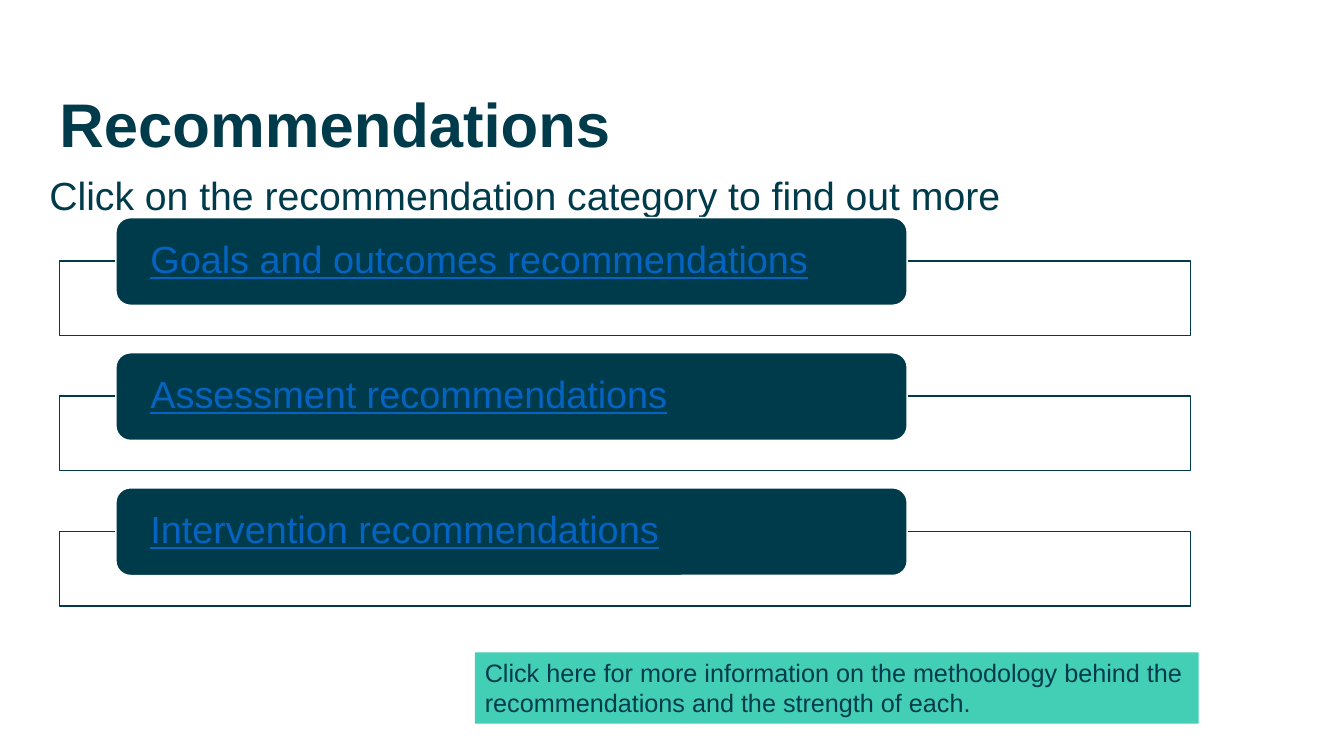
from lxml.etree import SubElement
from pptx import Presentation
from pptx.dml.color import RGBColor
from pptx.enum.shapes import MSO_SHAPE as Shape
from pptx.enum.text import MSO_ANCHOR as Anchor, MSO_AUTO_SIZE as AutoSize, PP_ALIGN as Align
from pptx.oxml.ns import qn
from pptx.util import Pt

PETROL = RGBColor(0x00, 0x3B, 0x4C)
MINT = RGBColor(0x43, 0xCF, 0xB5)
LINK_BLUE = RGBColor(0x05, 0x63, 0xC1)
WHITE = RGBColor(0xFF, 0xFF, 0xFF)

CATEGORIES = [
    "Goals and outcomes recommendations",
    "Assessment recommendations",
    "Intervention recommendations",
]
FIRST_TOP = 155.5
PITCH = 96.5


def place(shape, left, top, width, height):
    shape.left, shape.top = Pt(left), Pt(top)
    shape.width, shape.height = Pt(width), Pt(height)


def write(shape, text, size, color=PETROL, spacing=0.9, anchor=Anchor.TOP):
    frame = shape.text_frame
    frame.word_wrap = True
    frame.auto_size = AutoSize.NONE
    frame.vertical_anchor = anchor
    para = frame.paragraphs[0]
    para.text = text
    para.alignment = Align.LEFT
    para.line_spacing = spacing
    para.space_before = Pt(0)
    para.font.name = "Arial"
    para.font.size = Pt(size)
    para.font.color.rgb = color
    return para


def set_side_insets(frame, inset):
    frame.margin_left = frame.margin_right = Pt(inset)
    frame.margin_top = frame.margin_bottom = Pt(0)


def add_block(page, kind, bounds, fill, line=None):
    block = page.shapes.add_shape(kind, *map(Pt, bounds))
    block.shadow.inherit = False
    block.fill.solid()
    block.fill.fore_color.rgb = fill
    if line is None:
        block.line.fill.background()
    else:
        block.line.color.rgb = line
        block.line.width = Pt(1)
    return block


def set_opacity(shape, percent):
    color = shape.fill._xPr.find(qn("a:solidFill"))[0]
    SubElement(color, qn("a:alpha"), val=str(percent * 1000))


def add_category(page, text, top):
    frame_box = add_block(page, Shape.RECTANGLE, (42.5, top + 31, 807.8, 53.3), WHITE, PETROL)
    set_opacity(frame_box, 90)
    label = add_block(page, Shape.ROUNDED_RECTANGLE, (82.8, top, 565.2, 62.6), PETROL, WHITE)
    para = write(label, text, 27, LINK_BLUE, anchor=Anchor.MIDDLE)
    para.font.underline = True
    set_side_insets(label.text_frame, 21.6)


def main():
    deck = Presentation()
    deck.slide_width, deck.slide_height = Pt(960), Pt(540)
    page = deck.slides.add_slide(deck.slide_layouts[1])

    # Title
    title = page.shapes.title
    place(title, 42.5, 62.6, 807.8, 56.9)
    write(title, "Recommendations", 44, anchor=Anchor.MIDDLE).font.bold = True
    set_side_insets(title.text_frame, 0)

    # Instruction, without the template's bullet
    body = page.placeholders[1]
    place(body, 28, 122.4, 877, 185.8)
    properties = body.text_frame.paragraphs[0]._p.get_or_add_pPr()
    properties.set("marL", "0")
    properties.set("indent", "0")
    SubElement(properties, qn("a:buNone"))
    write(body, "Click on the recommendation category to find out more", 28)

    # Recommendation categories
    for index, category in enumerate(CATEGORIES):
        add_category(page, category, FIRST_TOP + index * PITCH)

    # Methodology note
    note = add_block(page, Shape.RECTANGLE, (339.2, 466, 517, 51), MINT)
    write(note, "Click here for more information on the methodology behind the "
          "recommendations and the strength of each.", 18, spacing=1.0)

    deck.save("out.pptx")


if __name__ == "__main__":
    main()
